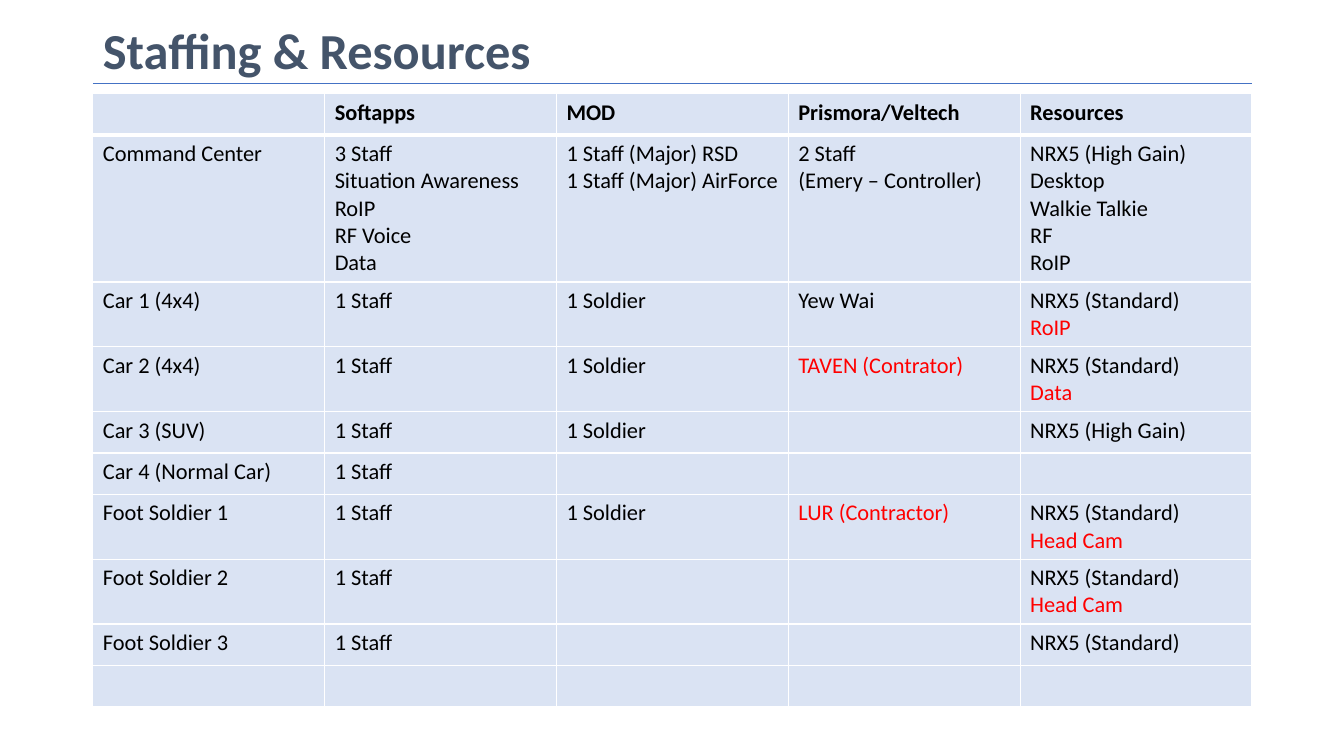
from dataclasses import dataclass

from lxml.etree import SubElement
from pptx import Presentation
from pptx.dml.color import RGBColor
from pptx.enum.shapes import MSO_CONNECTOR
from pptx.enum.text import MSO_ANCHOR, MSO_AUTO_SIZE, PP_ALIGN
from pptx.oxml.ns import qn
from pptx.slide import Slide
from pptx.table import _Cell
from pptx.text.text import _Paragraph
from pptx.util import Cm, Pt

FONT = "Calibri"
WHITE = RGBColor(0xFF, 0xFF, 0xFF)
BLACK = RGBColor(0x00, 0x00, 0x00)
RED = RGBColor(0xFF, 0x00, 0x00)
SLATE = RGBColor(0x44, 0x54, 0x6A)
BLUE = RGBColor(0x44, 0x72, 0xC4)
PALE_BLUE = RGBColor(0xDA, 0xE3, 0xF3)

LEFT = 2.34
WIDTH = 29.21
TITLE_TOP, TITLE_HEIGHT = 0.51, 1.68
RULE_TOP = 2.11
TABLE_TOP = 2.36
MINIMUM_ROW_HEIGHT = 1.04
LINE_HEIGHT = 0.69
CELL_PADDING = 0.25


@dataclass(frozen=True)
class Line:
    text: str
    color: RGBColor = BLACK


@dataclass(frozen=True)
class Assignment:
    """One table row: a unit, its people by organisation and its equipment."""
    unit: tuple[Line, ...] = ()
    software: tuple[Line, ...] = ()
    ministry: tuple[Line, ...] = ()
    contractor: tuple[Line, ...] = ()
    resources: tuple[Line, ...] = ()

    def cells(self) -> list[tuple[Line, ...]]:
        return [self.unit, self.software, self.ministry, self.contractor, self.resources]

    def height(self) -> float:
        line_count = max(len(lines) for lines in self.cells())
        return max(MINIMUM_ROW_HEIGHT, CELL_PADDING + LINE_HEIGHT * line_count)


def plain(*texts: str) -> tuple[Line, ...]:
    return tuple(Line(text) for text in texts)


STAFF = plain("1 Staff")
SOLDIER = plain("1 Soldier")
HIGH_GAIN = plain("NRX5 (High Gain)")
STANDARD = plain("NRX5 (Standard)")
HEAD_CAM = (Line("Head Cam", RED),)

ASSIGNMENTS = [
    Assignment((), plain("Softapps"), plain("MOD"),
               plain("Prismora/Veltech"), plain("Resources")),
    Assignment(
        plain("Command Center"),
        plain("3 Staff", "Situation Awareness", "RoIP", "RF Voice", "Data"),
        plain("1 Staff (Major) RSD", "1 Staff (Major) AirForce"),
        plain("2 Staff", "(Emery – Controller)"),
        HIGH_GAIN + plain("Desktop", "Walkie Talkie", "RF", "RoIP")),
    Assignment(plain("Car 1 (4x4)"), STAFF, SOLDIER, plain("Yew Wai"),
               STANDARD + (Line("RoIP", RED),)),
    Assignment(plain("Car 2 (4x4)"), STAFF, SOLDIER, (Line("TAVEN (Contrator)", RED),),
               STANDARD + (Line("Data", RED),)),
    Assignment(plain("Car 3 (SUV)"), STAFF, SOLDIER, (), HIGH_GAIN),
    Assignment(plain("Car 4 (Normal Car)"), STAFF),
    Assignment(plain("Foot Soldier 1"), STAFF, SOLDIER, (Line("LUR (Contractor)", RED),),
               STANDARD + HEAD_CAM),
    Assignment(plain("Foot Soldier 2"), STAFF, resources=STANDARD + HEAD_CAM),
    Assignment(plain("Foot Soldier 3"), STAFF, resources=STANDARD),
    Assignment(),
]


def add_run(paragraph: _Paragraph, text: str, size: int, color: RGBColor, bold: bool) -> None:
    run = paragraph.add_run()
    run.text = text
    run.font.name = FONT
    run.font.size = Pt(size)
    run.font.bold = bold
    run.font.color.rgb = color


def add_title(slide: Slide, text: str) -> None:
    title = slide.shapes.title
    title.left, title.top = Cm(LEFT), Cm(TITLE_TOP)
    title.width, title.height = Cm(WIDTH), Cm(TITLE_HEIGHT)
    frame = title.text_frame
    frame.word_wrap = True
    frame.auto_size = MSO_AUTO_SIZE.NONE
    frame.vertical_anchor = MSO_ANCHOR.MIDDLE
    paragraph = frame.paragraphs[0]
    paragraph.alignment = PP_ALIGN.LEFT
    paragraph.line_spacing = 0.9
    add_run(paragraph, text, 36, SLATE, True)


def set_borders(cell: _Cell, top: int, bottom: int) -> None:
    """Draw white cell edges; top and bottom widths are in points."""
    properties = cell._tc.get_or_add_tcPr()
    for side, width in {"L": 1, "R": 1, "T": top, "B": bottom}.items():
        border = SubElement(properties, qn(f"a:ln{side}"), w=str(Pt(width)))
        fill = SubElement(border, qn("a:solidFill"))
        SubElement(fill, qn("a:srgbClr"), val=str(WHITE))


def fill_cell(cell: _Cell, lines: tuple[Line, ...], row_index: int) -> None:
    set_borders(cell, top=3 if row_index == 1 else 1, bottom=3 if row_index == 0 else 1)
    cell.fill.solid()
    cell.fill.fore_color.rgb = PALE_BLUE
    frame = cell.text_frame
    for index, line in enumerate(lines):
        paragraph = frame.add_paragraph() if index else frame.paragraphs[0]
        add_run(paragraph, line.text, 16, line.color, row_index == 0)


def add_staffing_table(slide: Slide, assignments: list[Assignment]) -> None:
    column_count = len(assignments[0].cells())
    total_height = sum(assignment.height() for assignment in assignments)
    table = slide.shapes.add_table(len(assignments), column_count, Cm(LEFT), Cm(TABLE_TOP),
                                   Cm(WIDTH), Cm(total_height)).table
    table.first_row = False
    table.horz_banding = False
    for column in table.columns:
        column.width = Cm(WIDTH / column_count)
    for row_index, assignment in enumerate(assignments):
        table.rows[row_index].height = Cm(assignment.height())
        for column_index, lines in enumerate(assignment.cells()):
            fill_cell(table.cell(row_index, column_index), lines, row_index)


def add_title_rule(slide: Slide) -> None:
    rule = slide.shapes.add_connector(MSO_CONNECTOR.STRAIGHT, Cm(LEFT), Cm(RULE_TOP),
                                      Cm(LEFT + WIDTH), Cm(RULE_TOP))
    rule.line.color.rgb = BLUE
    rule.line.width = Pt(0.5)
    SubElement(rule._element.spPr, qn("a:effectLst"))


def main() -> None:
    presentation = Presentation()
    presentation.slide_width, presentation.slide_height = Cm(33.87), Cm(19.05)
    slide = presentation.slides.add_slide(presentation.slide_layouts.get_by_name("Title Only"))
    add_title(slide, "Staffing & Resources")
    add_staffing_table(slide, ASSIGNMENTS)
    add_title_rule(slide)
    presentation.save("out.pptx")


if __name__ == "__main__":
    main()
